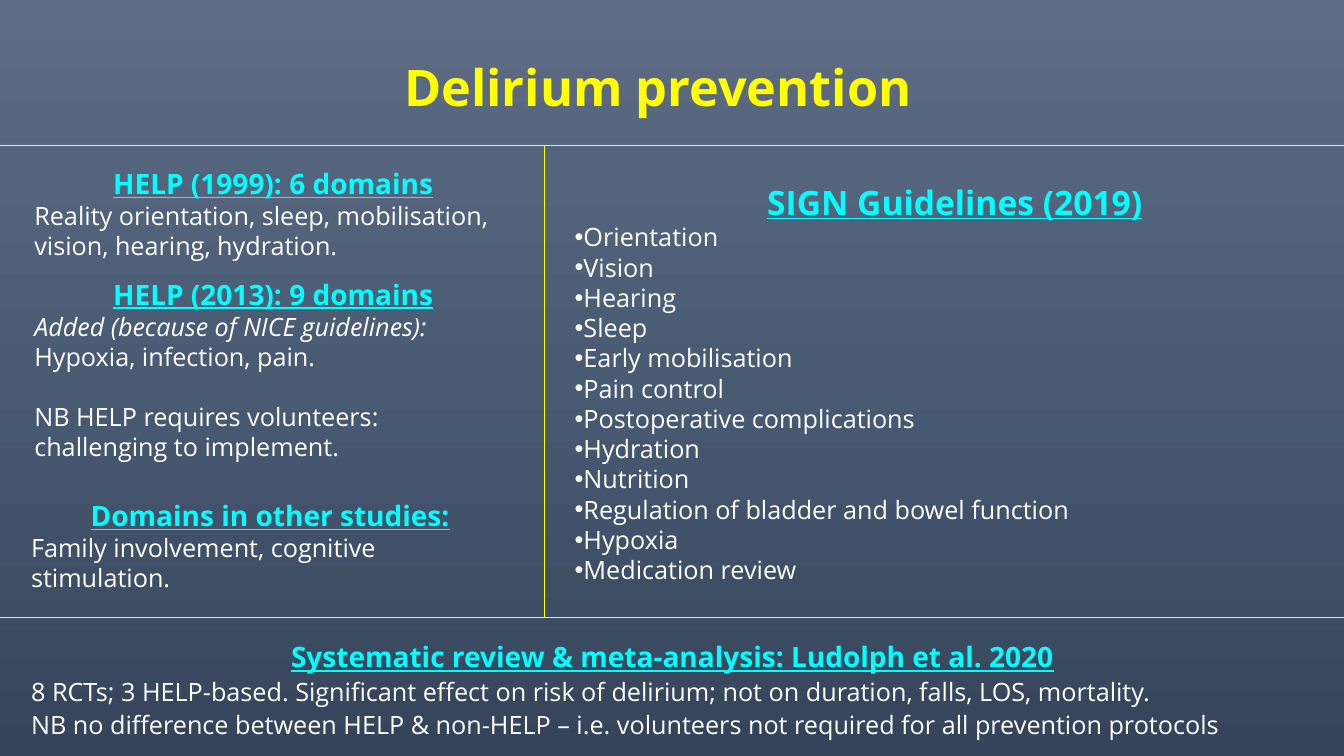
from dataclasses import dataclass

from lxml import etree
from pptx import Presentation, util as u
from pptx.dml.color import RGBColor
from pptx.enum import shapes, text
from pptx.oxml import ns, parse_xml


@dataclass(frozen=True)
class Theme:
    font: str = "Open Sans"
    title: str = "FFFF00"
    heading: str = "00FFFF"
    body: str = "FFFFFF"
    rule: str = "FFFF00"
    gradient: tuple = ((0, "5E6D85"), (50, "495A73"), (100, "35445A"))
    title_size: int = 36
    lead_size: int = 24
    heading_size: int = 20
    body_size: int = 18
    rule_width: float = 0.5


def add_text(p, content, font, size, color, bold=False, underline=False, italic=False):
    r = p.add_run()
    r.text = content
    f = r.font
    f.name, f.size = font, u.Pt(size)
    f.bold, f.underline, f.italic = bold, underline, italic
    f.color.rgb = RGBColor.from_string(color)


class Deck:
    """Draw styled elements on the current slide."""

    def __init__(self, prs, theme):
        self.theme = theme
        self.s = prs.slides.add_slide(prs.slide_layouts[3])

    def background(self):
        stops = "".join(f'<a:gs pos="{pos * 1000}"><a:srgbClr val="{c}"/></a:gs>'
                        for pos, c in self.theme.gradient)
        bg = parse_xml(
            f'<p:bg {ns.nsdecls("p", "a")}><p:bgPr><a:gradFill rotWithShape="1">'
            f'<a:gsLst>{stops}</a:gsLst><a:lin ang="5400000" scaled="0"/></a:gradFill>'
            '<a:effectLst/></p:bgPr></p:bg>')
        self.s.element.cSld.insert(0, bg)

    def frame(self, box, idx=None):
        x, y, w, h = map(u.Inches, box)
        if idx is None:
            sp = self.s.shapes.add_textbox(x, y, w, h)
        else:
            sp = self.s.placeholders[idx]
            sp.left, sp.top, sp.width, sp.height = x, y, w, h
        tf = sp.text_frame
        tf.word_wrap = True
        tf.auto_size = text.MSO_AUTO_SIZE.NONE
        tf.vertical_anchor = text.MSO_ANCHOR.TOP
        return tf

    def paragraph(self, tf, align=text.PP_ALIGN.LEFT, before=0, after=0, spacing=1.0,
                  margin=0, indent=0, bullet=None):
        p = tf.paragraphs[0]
        if p.runs:
            p = tf.add_paragraph()
        p.alignment, p.line_spacing = align, spacing
        p.space_before, p.space_after = u.Pt(before), u.Pt(after)
        pPr = p._p.get_or_add_pPr()
        pPr.set("marL", str(u.Inches(margin)))
        pPr.set("indent", str(u.Inches(indent)))
        if bullet:
            etree.SubElement(pPr, ns.qn("a:buFont")).set("typeface", "Arial")
            etree.SubElement(pPr, ns.qn("a:buChar")).set("char", bullet)
        else:
            etree.SubElement(pPr, ns.qn("a:buNone"))
        return p

    def title(self, content, box):
        t = self.theme
        p = self.paragraph(self.frame(box, 0), text.PP_ALIGN.CENTER, spacing=1.5,
                           margin=0.5, indent=-0.5)
        add_text(p, content, t.font, t.title_size, t.title, bold=True)

    def heading(self, tf, content, size=None, **layout):
        t = self.theme
        p = self.paragraph(tf, text.PP_ALIGN.CENTER, **layout)
        add_text(p, content, t.font, size or t.heading_size, t.heading,
                 bold=True, underline=True)

    def body(self, tf, content, lead="", **layout):
        t = self.theme
        p = self.paragraph(tf, **layout)
        if lead:
            add_text(p, lead, t.font, t.body_size, t.body, italic=True)
        add_text(p, content, t.font, t.body_size, t.body)

    def rule(self, x1, y1, x2, y2):
        c = self.s.shapes.add_connector(shapes.MSO_CONNECTOR.STRAIGHT,
                                        *map(u.Inches, (x1, y1, x2, y2)))
        c.line.color.rgb = RGBColor.from_string(self.theme.rule)
        c.line.width = u.Pt(self.theme.rule_width)
        etree.SubElement(c._element.spPr, ns.qn("a:effectLst"))


def main():
    prs = Presentation()
    prs.slide_width, prs.slide_height = u.Inches(13.33), u.Inches(7.5)
    theme = Theme()
    d = Deck(prs, theme)
    d.background()
    d.title("Delirium prevention", (0.3, 0.21, 12.45, 0.89))

    tf = d.frame((0.24, 1.6, 4.94, 3.06), 1)
    d.heading(tf, "HELP (1999): 6 domains")
    d.body(tf, "Reality orientation, sleep, mobilisation, vision, hearing, hydration.", after=12)
    d.heading(tf, "HELP (2013): 9 domains")
    d.body(tf, "Hypoxia, infection, pain.", lead="Added (because of NICE guidelines): ")
    d.body(tf, "NB HELP requires volunteers: challenging to implement.", before=21.6)

    tf = d.frame((5.6, 1.55, 7.74, 4.34), 2)
    d.heading(tf, "SIGN Guidelines (2019)", theme.lead_size, spacing=1.5)
    for item in ("Orientation", "Vision", "Hearing", "Sleep", "Early mobilisation",
                 "Pain control", "Postoperative complications", "Hydration", "Nutrition",
                 "Regulation of bladder and bowel function", "Hypoxia", "Medication review"):
        d.body(tf, item, indent=-0.31, bullet="•")

    top, bottom, divider = 1.44, 6.12, 5.4
    for y in (top, bottom):
        d.rule(-0.02, y, 13.33, y)
    d.rule(divider, top, divider, bottom)

    tf = d.frame((0.21, 4.9, 4.94, 1.04))
    d.heading(tf, "Domains in other studies:")
    d.body(tf, "Family involvement, cognitive stimulation.", after=12)

    tf = d.frame((0.21, 6.3, 12.92, 1.1))
    d.heading(tf, "Systematic review & meta-analysis: Ludolph et al. 2020", after=2)
    for line in ("8 RCTs; 3 HELP-based. Significant effect on risk of delirium; "
                 "not on duration, falls, LOS, mortality.",
                 "NB no difference between HELP & non-HELP – i.e. volunteers not required "
                 "for all prevention protocols"):
        d.body(tf, line, after=2)
    prs.save("out.pptx")


if __name__ == "__main__":
    main()
